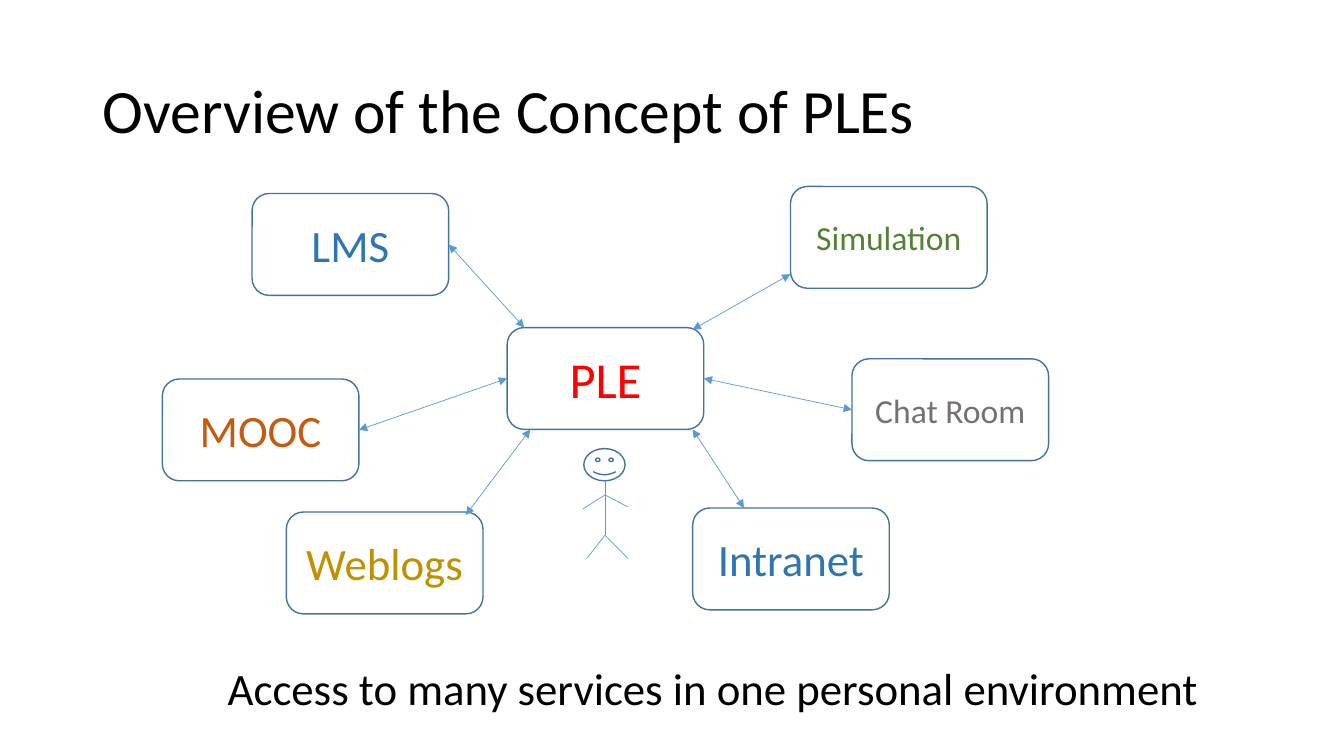
from lxml import etree
from pptx import Presentation
from pptx.dml import color
from pptx.enum import shapes, text
from pptx.oxml import ns
from pptx.util import Inches, Pt

FONT = "Calibri"
HUES = {
    "black": "000000", "edge": "43739E", "link": "5B9BD5", "red": "FF0000",
    "blue": "2E75B6", "rust": "C55A11", "gold": "BF9000", "green": "548235",
    "gray": "767171",
}
BOX = (1.95, 1.01)
NODES = [
    ("PLE", 5.03, 3.25, 36, "red"),
    ("LMS", 2.5, 1.92, 32, "blue"),
    ("MOOC", 1.61, 3.76, 32, "rust"),
    ("Weblogs", 2.84, 5.08, 32, "gold"),
    ("Simulation", 7.84, 1.85, 24, "green"),
    ("Chat Room", 8.45, 3.56, 24, "gray"),
    ("Intranet", 6.87, 5.04, 32, "blue"),
]
LINKS = [
    ((4.44, 2.43), (5.2, 3.25), ("LMS", 3), None),
    ((3.55, 4.26), (5.03, 3.76), ("MOOC", 3), ("PLE", 1)),
    ((4.62, 5.11), (5.26, 4.26), None, None),
    ((7.84, 2.72), (6.87, 3.27), None, None),
    ((6.97, 3.76), (8.45, 4.07), ("PLE", 3), ("Chat Room", 1)),
    ((6.87, 4.26), (7.38, 5.04), None, None),
]
LIMBS = [
    ((6, 4.77), (6, 5.31)),
    ((6, 5.31), (5.82, 5.54)),
    ((6, 5.31), (6.23, 5.54)),
    ((6, 4.91), (5.78, 5.05)),
    ((6, 4.91), (6.23, 5.03)),
]


def hue(name):
    """Return the named colour."""
    return color.RGBColor.from_string(HUES[name])


def write(frame, words, size, tint):
    """Put one styled paragraph in a text frame."""
    para = frame.paragraphs[0]
    para.text = words
    para.font.name, para.font.size = FONT, Pt(size)
    para.font.color.rgb = hue(tint)
    return para


def label(slide, words, place, size, anchor):
    """Add a wrapped text box."""
    frame = slide.shapes.add_textbox(*map(Inches, place)).text_frame
    frame.word_wrap = True
    frame.vertical_anchor = anchor
    return write(frame, words, size, "black")


def outline(slide, kind, place):
    """Add an unfilled preset shape."""
    shape = slide.shapes.add_shape(kind, *map(Inches, place))
    shape.shadow.inherit = False
    shape.fill.background()
    shape.line.color.rgb = hue("edge")
    shape.line.width = Pt(1)
    return shape


def node(slide, words, left, top, size, tint):
    """Add a rounded box with centred words."""
    kind = shapes.MSO_SHAPE.ROUNDED_RECTANGLE
    shape = outline(slide, kind, (left, top, *BOX))
    shape.text_frame.vertical_anchor = text.MSO_ANCHOR.MIDDLE
    write(shape.text_frame, words, size, tint).alignment = text.PP_ALIGN.CENTER
    return shape


def stroke(slide, start, end):
    """Add a thin straight line."""
    line = slide.shapes.add_connector(
        shapes.MSO_CONNECTOR.STRAIGHT, *map(Inches, (*start, *end)))
    line.line.color.rgb = hue("link")
    line.line.width = Pt(0.5)
    etree.SubElement(line._element.spPr, ns.qn("a:effectLst"))
    return line


def arrow(slide, boxes, start, end, first, last):
    """Add a two-headed arrow, joined to boxes where named."""
    line = stroke(slide, start, end)
    for tag in ("a:headEnd", "a:tailEnd"):
        etree.SubElement(line.line._get_or_add_ln(), ns.qn(tag), type="triangle")
    if first:
        line.begin_connect(boxes[first[0]], first[1])
    if last:
        line.end_connect(boxes[last[0]], last[1])


def person(slide):
    """Draw the stick figure."""
    outline(slide, shapes.MSO_SHAPE.SMILEY_FACE, (5.79, 4.45, 0.41, 0.32))
    for start, end in LIMBS:
        stroke(slide, start, end)


def main():
    """Build the slide and save it."""
    deck = Presentation()
    deck.slide_width, deck.slide_height = Inches(13.33), Inches(7.5)
    slide = deck.slides.add_slide(deck.slide_layouts[6])
    title = label(slide, "Overview of the Concept of PLEs",
                  (0.92, 0.4, 11.5, 1.45), 44, text.MSO_ANCHOR.MIDDLE)
    title.line_spacing = 0.9
    boxes = {item[0]: node(slide, *item) for item in NODES}
    for link in LINKS:
        arrow(slide, boxes, *link)
    label(slide, "Access to many services in one personal environment",
          (2.16, 6.51, 9.92, 0.64), 32, text.MSO_ANCHOR.TOP)
    person(slide)
    deck.save("out.pptx")


if __name__ == "__main__":
    main()
